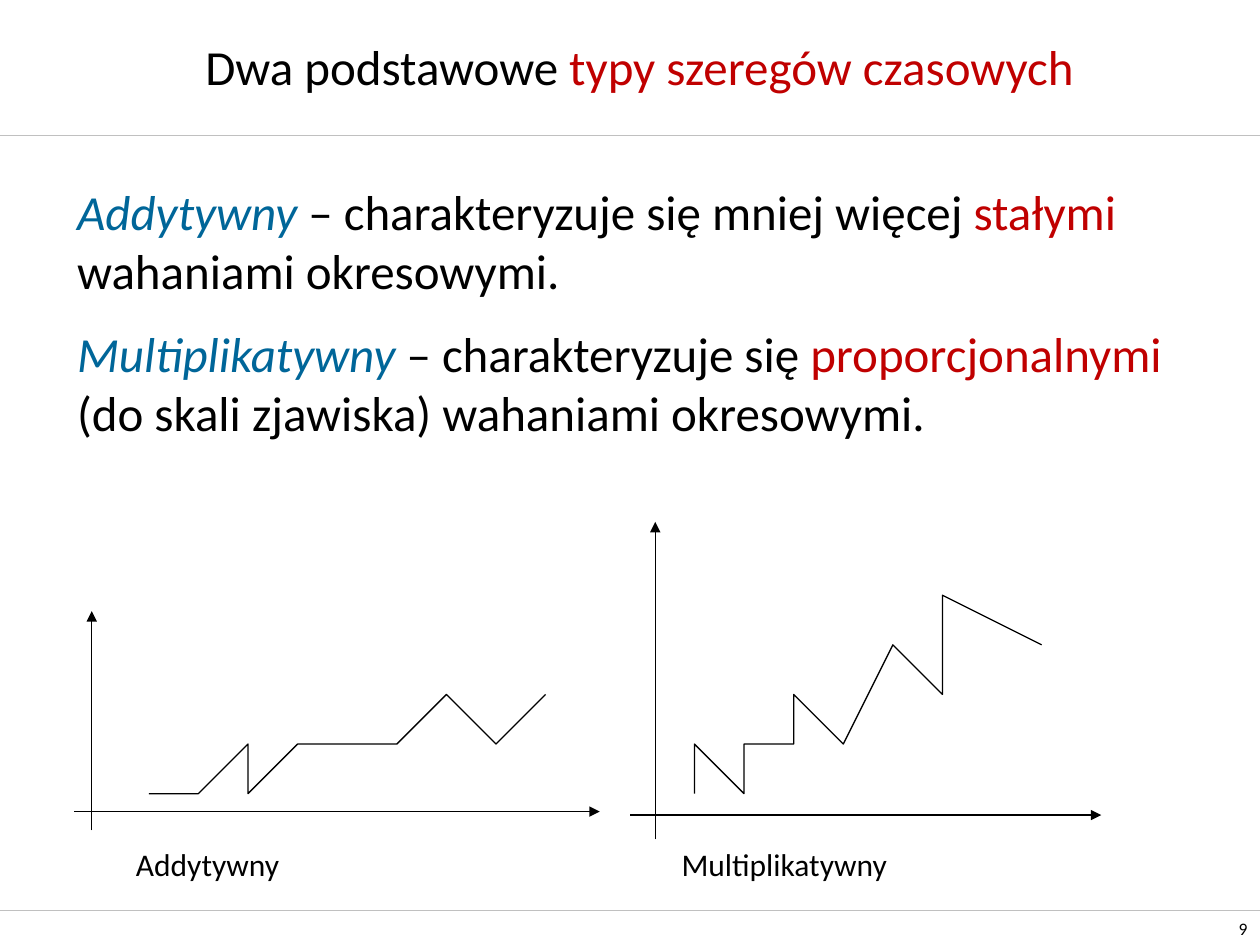
from lxml.etree import SubElement
from pptx import Presentation
from pptx.dml.color import RGBColor
from pptx.enum.shapes import MSO_CONNECTOR
from pptx.enum.text import MSO_ANCHOR, MSO_AUTO_SIZE, PP_ALIGN
from pptx.oxml.ns import qn
from pptx.util import Cm, Pt

COLORS = {"text": "000000", "accent": "C00000", "term": "006699", "rule": "C0C0C0"}
FONT = "Calibri"
WIDTH, HEIGHT = 25.4, 19.05


class SlideBuilder:
    """Holds the style and the current slide; all lengths are in centimetres."""

    def __init__(self, slide):
        self.slide = slide

    def color(self, key):
        return RGBColor.from_string(COLORS[key])

    def place(self, shape, left, top, width, height):
        shape.left, shape.top = Cm(left), Cm(top)
        shape.width, shape.height = Cm(width), Cm(height)

    def add_runs(self, paragraph, runs, size):
        for text, key in runs:
            run = paragraph.add_run()
            run.text = text
            run.font.name = FONT
            run.font.size = Pt(size)
            run.font.italic = key == "term"
            run.font.color.rgb = self.color(key)

    def title(self, box, runs):
        title = self.slide.shapes.title
        self.place(title, *box)
        frame = title.text_frame
        frame.auto_size = MSO_AUTO_SIZE.NONE
        frame.vertical_anchor = MSO_ANCHOR.MIDDLE
        frame.paragraphs[0].alignment = PP_ALIGN.CENTER
        self.add_runs(frame.paragraphs[0], runs, 28)

    def body(self, box, paragraphs):
        body = self.slide.placeholders[1]
        self.place(body, *box)
        frame = body.text_frame
        frame.auto_size = MSO_AUTO_SIZE.NONE
        for index, runs in enumerate(paragraphs):
            paragraph = frame.add_paragraph() if index else frame.paragraphs[0]
            paragraph.space_before = Pt(14 if index else 0)
            properties = paragraph._p.get_or_add_pPr()
            properties.set("marL", "0")
            properties.set("indent", "0")
            SubElement(properties, qn("a:buNone"))
            self.add_runs(paragraph, runs, 28)

    def label(self, box, text, size, align=PP_ALIGN.LEFT, anchor=MSO_ANCHOR.TOP):
        frame = self.slide.shapes.add_textbox(*map(Cm, box)).text_frame
        frame.word_wrap = False
        frame.vertical_anchor = anchor
        frame.paragraphs[0].alignment = align
        self.add_runs(frame.paragraphs[0], [(text, "text")], size)

    def line(self, start, end, key="text", width=0.75, arrow=False):
        line = self.slide.shapes.add_connector(
            MSO_CONNECTOR.STRAIGHT, *map(Cm, start + end))
        line.line.color.rgb = self.color(key)
        line.line.width = Pt(width)
        if arrow:
            SubElement(line.line._get_or_add_ln(), qn("a:tailEnd"), type="triangle")
        SubElement(line._element.spPr, qn("a:effectLst"))

    def series(self, points):
        builder = self.slide.shapes.build_freeform(*points[0], scale=Cm(1))
        builder.add_line_segments(points[1:], close=False)
        curve = builder.convert_to_shape()
        curve.shadow.inherit = False
        curve.fill.background()
        curve.line.color.rgb = self.color("text")
        curve.line.width = Pt(0.75)

    def plot(self, axis_x, x_range, axis_y, y_range, points):
        bottom, top = y_range
        left, right = x_range
        self.line((axis_x, bottom), (axis_x, top), arrow=True)
        self.line((left, axis_y), (right, axis_y), arrow=True)
        self.series(points)


def main():
    presentation = Presentation()
    presentation.slide_width, presentation.slide_height = Cm(WIDTH), Cm(HEIGHT)
    builder = SlideBuilder(presentation.slides.add_slide(presentation.slide_layouts[1]))

    # Header and footer rules, slide number
    for rule_y in (2.72, 18.34):
        builder.line((0, rule_y), (WIDTH, rule_y), "rule", 0.25)
    builder.label((24.1, 18.34, 1.3, 0.71), "9", 10, PP_ALIGN.RIGHT, MSO_ANCHOR.BOTTOM)

    # Title and definitions
    builder.title((2.49, 0.53, 20.8, 1.6), [
        ("Dwa podstawowe ", "text"), ("typy szeregów czasowych", "accent")])
    builder.body((1.3, 3.53, 22.86, 14.2), [
        [("Addytywny", "term"),
         (" – charakteryzuje się mniej więcej ", "text"),
         ("stałymi", "accent"),
         (" wahaniami okresowymi.", "text")],
        [("Multiplikatywny", "term"),
         (" – charakteryzuje się ", "text"),
         ("proporcjonalnymi", "accent"),
         (" (do skali zjawiska) wahaniami okresowymi.", "text")],
    ])

    # Additive series: steady swings
    builder.plot(1.85, (1.5, 12.09), 16.36, (16.74, 12.32), [
        (2.67, 16.08), (3.28, 15.52), (3.96, 16.08), (4.67, 15.24),
        (5.38, 15.7), (6.1, 14.86), (7.04, 15.42), (7.52, 14.58),
        (8.46, 15.14), (9.04, 14.2), (10.11, 14.76), (10.69, 14.02)])
    builder.label((2.49, 16.92, 3.43, 1.02), "Addytywny", 18)

    # Multiplicative series: growing swings
    builder.plot(13.21, (12.7, 22.2), 16.43, (16.92, 10.52), [
        (13.79, 15.93), (14.2, 15.29), (14.71, 15.67), (15.09, 14.66),
        (15.9, 15.16), (16.31, 13.79), (17.4, 14.78), (17.91, 13.03),
        (18.9, 14.05), (19.38, 12.04), (20.88, 13.28)])
    builder.label((13.49, 16.92, 4.7, 1.02), "Multiplikatywny", 18)

    presentation.save("out.pptx")


if __name__ == "__main__":
    main()
